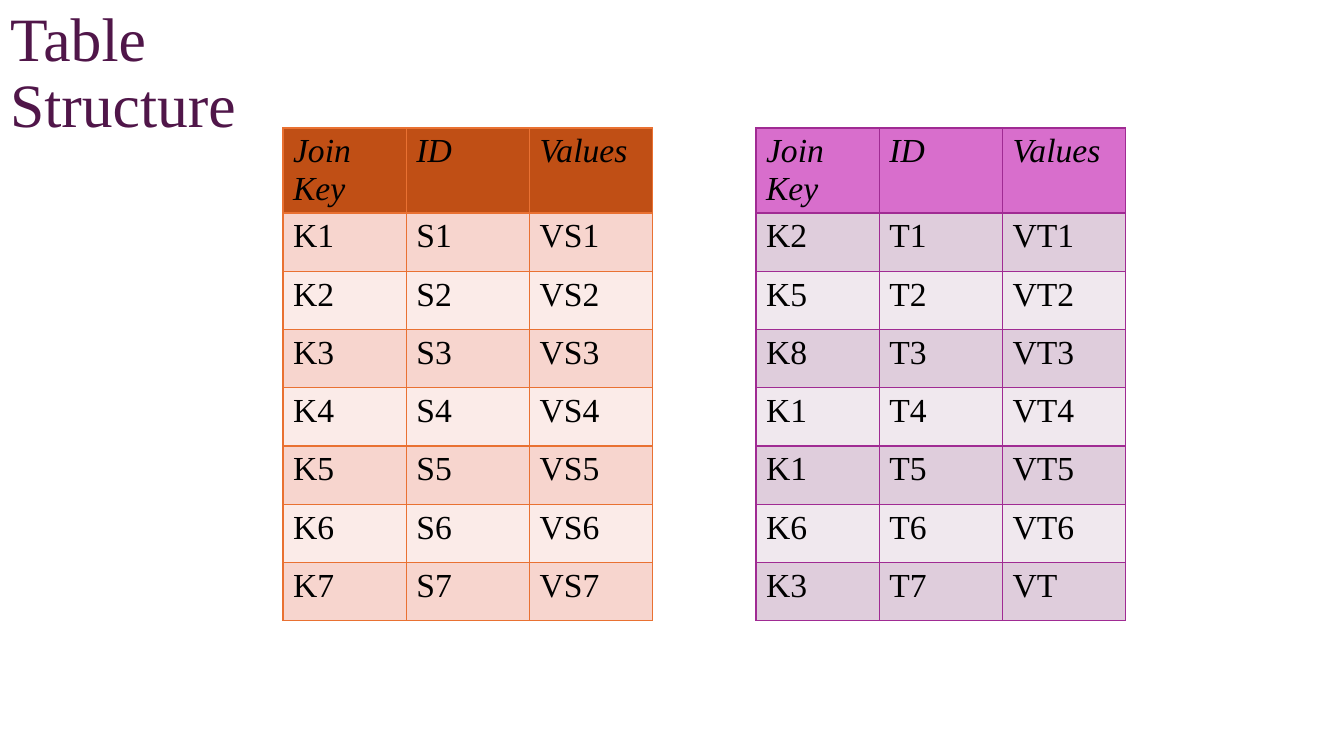
import lxml.etree
import pptx
import pptx.dml.color
import pptx.enum.text
import pptx.oxml.ns
import pptx.util

RGBColor = pptx.dml.color.RGBColor
PLUM = RGBColor(0x50, 0x16, 0x49)
BLACK = RGBColor(0x00, 0x00, 0x00)
PINK = RGBColor(0xD8, 0x6E, 0xCC)
MAUVE = RGBColor(0xDF, 0xCD, 0xDC)
PALE_MAUVE = RGBColor(0xF0, 0xE8, 0xEE)
PURPLE = RGBColor(0xA0, 0x2B, 0x93)
RUST = RGBColor(0xC0, 0x4F, 0x15)
PEACH = RGBColor(0xF7, 0xD5, 0xCE)
PALE_PEACH = RGBColor(0xFB, 0xEB, 0xE8)
ORANGE = RGBColor(0xE9, 0x71, 0x32)

FONT = "Times New Roman"
HEADINGS = ["Join Key", "ID", "Values"]
TABLE_TOP, TABLE_WIDTH, HEADER_HEIGHT, BODY_HEIGHT = 128, 370, 85, 408


def px(length):
    return pptx.util.Emu(round(length * 914400 / 100.8))


def add_borders(cell, color):
    properties = cell._tc.get_or_add_tcPr()
    for side in ("lnL", "lnR", "lnT", "lnB"):
        line = lxml.etree.SubElement(properties, pptx.oxml.ns.qn(f"a:{side}"), w="12700")
        fill = lxml.etree.SubElement(line, pptx.oxml.ns.qn("a:solidFill"))
        lxml.etree.SubElement(fill, pptx.oxml.ns.qn("a:srgbClr"), val=str(color))


presentation = pptx.Presentation()
presentation.slide_width = px(1344)
presentation.slide_height = px(756)
slide = presentation.slides.add_slide(presentation.slide_layouts[5])

title = slide.shapes.title
title.left, title.top, title.width, title.height = px(0), px(0), px(344), px(149)
title.text_frame.text = "Table Structure"
title.text_frame.auto_size = pptx.enum.text.MSO_AUTO_SIZE.NONE
title_paragraph = title.text_frame.paragraphs[0]
title_paragraph.alignment = pptx.enum.text.PP_ALIGN.LEFT
title_paragraph.line_spacing = 0.9
title_font = title_paragraph.runs[0].font
title_font.name = FONT
title_font.size = pptx.util.Pt(44)
title_font.color.rgb = PLUM

tables = [
    {
        "left": 756,
        "keys": ["K2", "K5", "K8", "K1", "K1", "K6", "K3"],
        "ids": [f"T{number}" for number in range(1, 8)],
        "values": [f"VT{number}" for number in range(1, 7)] + ["VT"],
        "header": PINK,
        "bands": [MAUVE, PALE_MAUVE],
        "border": PURPLE,
    },
    {
        "left": 283,
        "keys": [f"K{number}" for number in range(1, 8)],
        "ids": [f"S{number}" for number in range(1, 8)],
        "values": [f"VS{number}" for number in range(1, 8)],
        "header": RUST,
        "bands": [PEACH, PALE_PEACH],
        "border": ORANGE,
    },
]

for content in tables:
    rows = [HEADINGS, *zip(content["keys"], content["ids"], content["values"])]
    table = slide.shapes.add_table(
        len(rows), len(HEADINGS), px(content["left"]), px(TABLE_TOP),
        px(TABLE_WIDTH), px(HEADER_HEIGHT + BODY_HEIGHT),
    ).table
    for column in table.columns:
        column.width = px(TABLE_WIDTH / len(HEADINGS))
    for row_index, texts in enumerate(rows):
        is_header = row_index == 0
        table.rows[row_index].height = px(HEADER_HEIGHT if is_header else BODY_HEIGHT / (len(rows) - 1))
        fill_color = content["header"] if is_header else content["bands"][(row_index - 1) % 2]
        for column_index, text in enumerate(texts):
            cell = table.cell(row_index, column_index)
            add_borders(cell, content["border"])
            cell.fill.solid()
            cell.fill.fore_color.rgb = fill_color
            cell.text = text
            font = cell.text_frame.paragraphs[0].runs[0].font
            font.color.rgb = BLACK
            font_format = {"name": FONT, "size": pptx.util.Pt(24), "bold": False, "italic": is_header}
            for attribute, value in font_format.items():
                setattr(font, attribute, value)

presentation.save("out.pptx")
